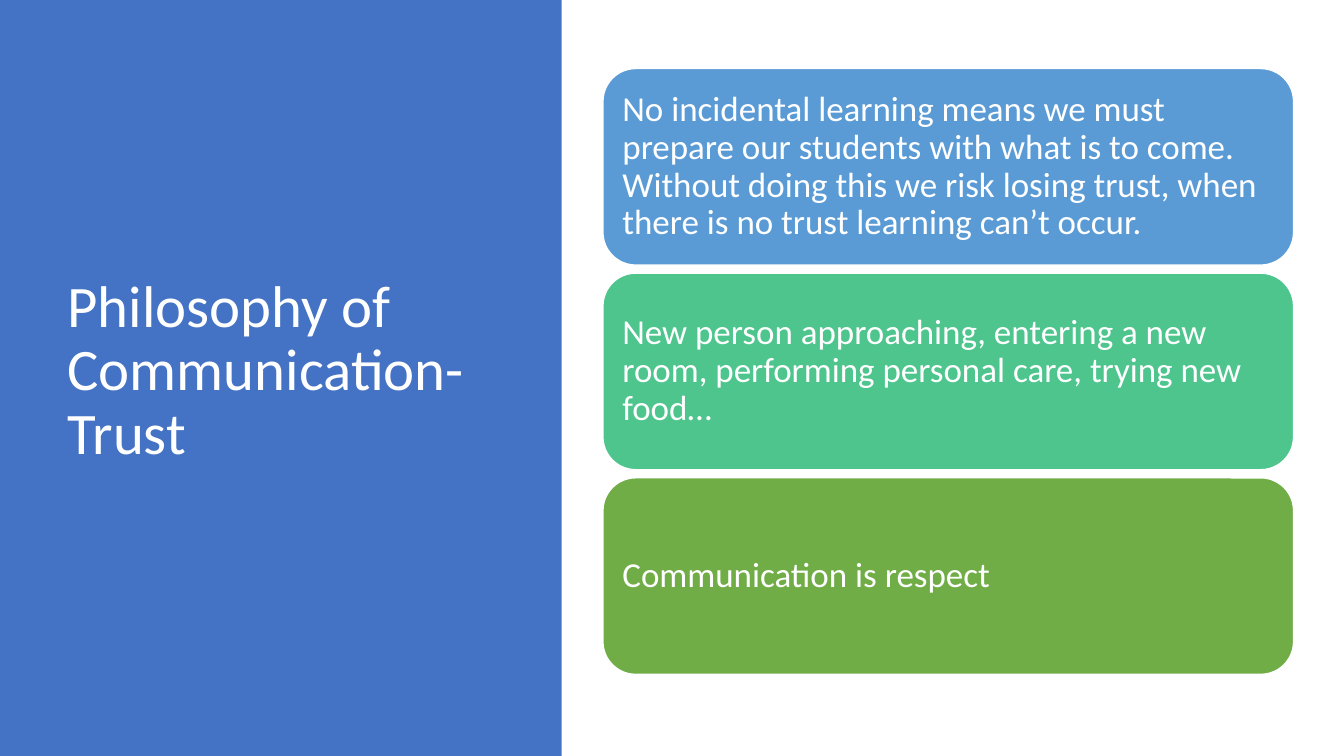
import dataclasses

import pptx
import pptx.dml.color
import pptx.enum.shapes
import pptx.enum.text
import pptx.util

EMU_PER_PX = 9144
SLIDE_WIDTH, SLIDE_HEIGHT = 1333, 750
PANEL_WIDTH = 557
CARD_LEFT, CARD_TOP, CARD_WIDTH, CARD_HEIGHT = 598, 68, 685, 195
CARD_STEP = 203
INSET = 10


@dataclasses.dataclass(frozen=True)
class Theme:
    font: str = "Calibri"
    title_size: int = 42
    card_size: int = 25
    line_spacing: float = 0.9
    panel: str = "4472C4"
    light: str = "FFFFFF"
    cards: tuple = ("5B9BD5", "4DC58D", "70AD47")


THEME = Theme()

TITLE = "Philosophy of Communication-Trust"
CARD_TEXTS = (
    "No incidental learning means we must prepare our students with what is to come. "
    "Without doing this we risk losing trust, when there is no trust learning can’t occur.",
    "New person approaching, entering a new room, performing personal care, trying new food…",
    "Communication is respect",
)


def px(length):
    return pptx.util.Emu(length * EMU_PER_PX)


def color(value):
    return pptx.dml.color.RGBColor.from_string(value)


def write_text(shape, text, size):
    frame = shape.text_frame
    frame.word_wrap = True
    frame.auto_size = pptx.enum.text.MSO_AUTO_SIZE.NONE
    frame.vertical_anchor = pptx.enum.text.MSO_ANCHOR.MIDDLE
    frame.margin_left = frame.margin_right = px(INSET)
    frame.margin_top = frame.margin_bottom = px(INSET)
    paragraph = frame.paragraphs[0]
    paragraph.alignment = pptx.enum.text.PP_ALIGN.LEFT
    paragraph.line_spacing = THEME.line_spacing
    run = paragraph.add_run()
    run.text = text
    run.font.name = THEME.font
    run.font.size = pptx.util.Pt(size)
    run.font.color.rgb = color(THEME.light)


def add_block(slide, kind, left, top, width, height, fill):
    shape = slide.shapes.add_shape(kind, px(left), px(top), px(width), px(height))
    shape.shadow.inherit = False
    shape.fill.solid()
    shape.fill.fore_color.rgb = color(fill)
    shape.line.fill.background()
    return shape


def add_panel(slide):
    rectangle = pptx.enum.shapes.MSO_SHAPE.RECTANGLE
    return add_block(slide, rectangle, 0, 0, PANEL_WIDTH, SLIDE_HEIGHT, THEME.panel)


def place_title(slide, panel):
    title = slide.shapes.title
    panel.element.addnext(title.element)
    title.left, title.top = px(57), px(68)
    title.width, title.height = px(416), px(602)
    write_text(title, TITLE, THEME.title_size)


def add_card(slide, index, text, fill):
    rounded = pptx.enum.shapes.MSO_SHAPE.ROUNDED_RECTANGLE
    top = CARD_TOP + index * CARD_STEP
    card = add_block(slide, rounded, CARD_LEFT, top, CARD_WIDTH, CARD_HEIGHT, fill)
    card.line.color.rgb = color(THEME.light)
    card.line.width = pptx.util.Pt(1)
    write_text(card, text, THEME.card_size)


def main():
    presentation = pptx.Presentation()
    presentation.slide_width = px(SLIDE_WIDTH)
    presentation.slide_height = px(SLIDE_HEIGHT)
    title_only = presentation.slide_layouts.get_by_name("Title Only")
    slide = presentation.slides.add_slide(title_only)
    place_title(slide, add_panel(slide))
    for index, (text, fill) in enumerate(zip(CARD_TEXTS, THEME.cards)):
        add_card(slide, index, text, fill)
    presentation.save("out.pptx")


if __name__ == "__main__":
    main()
